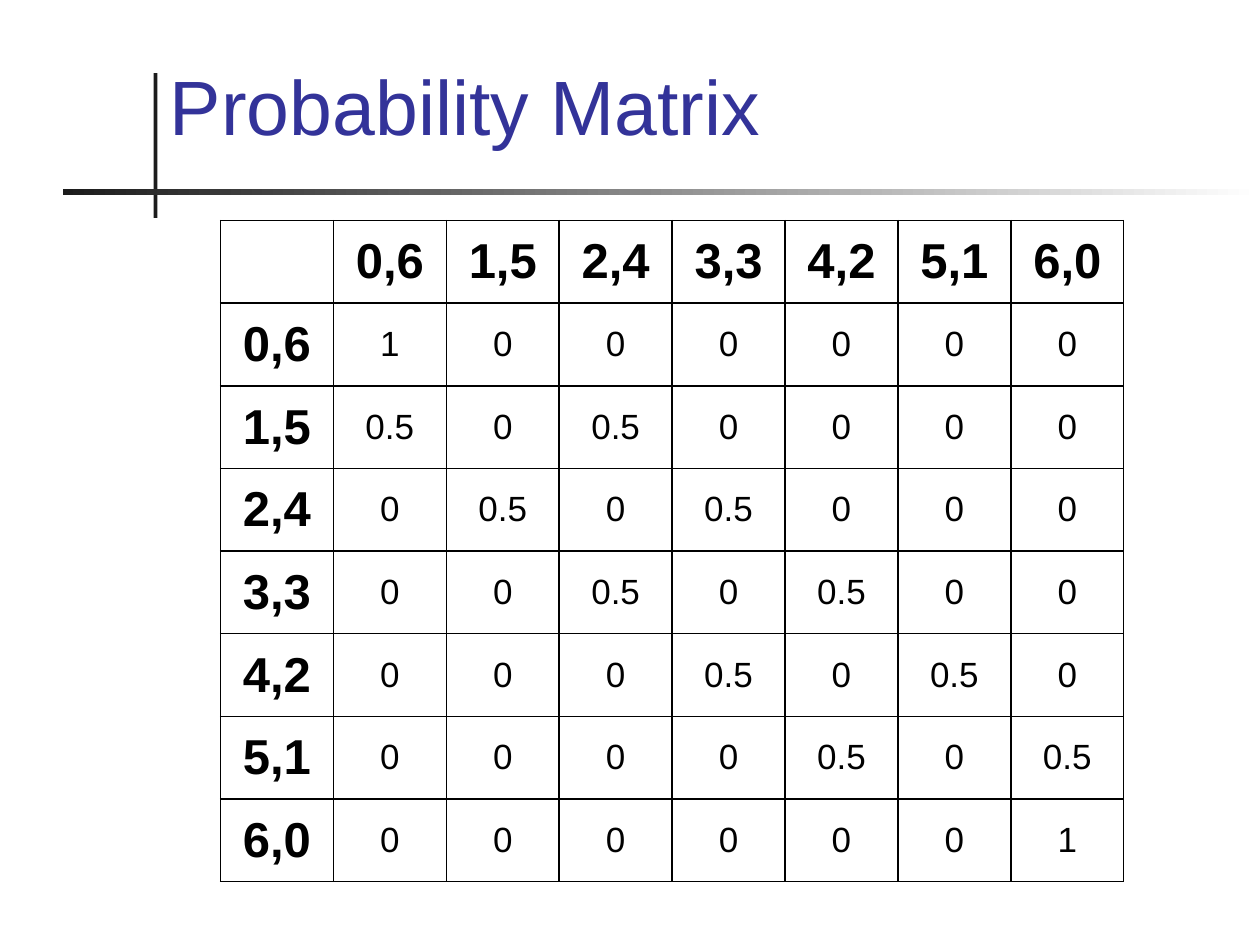
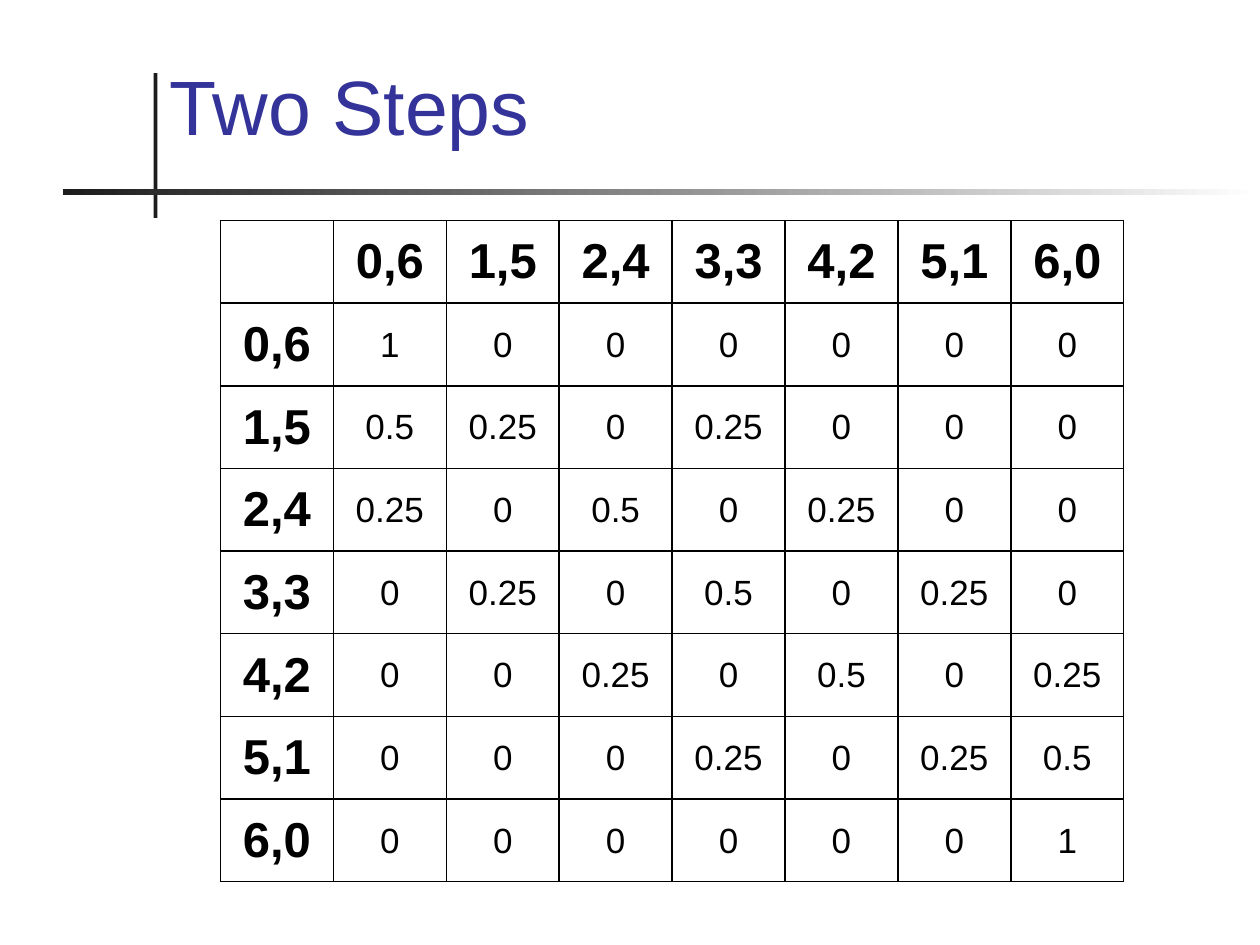
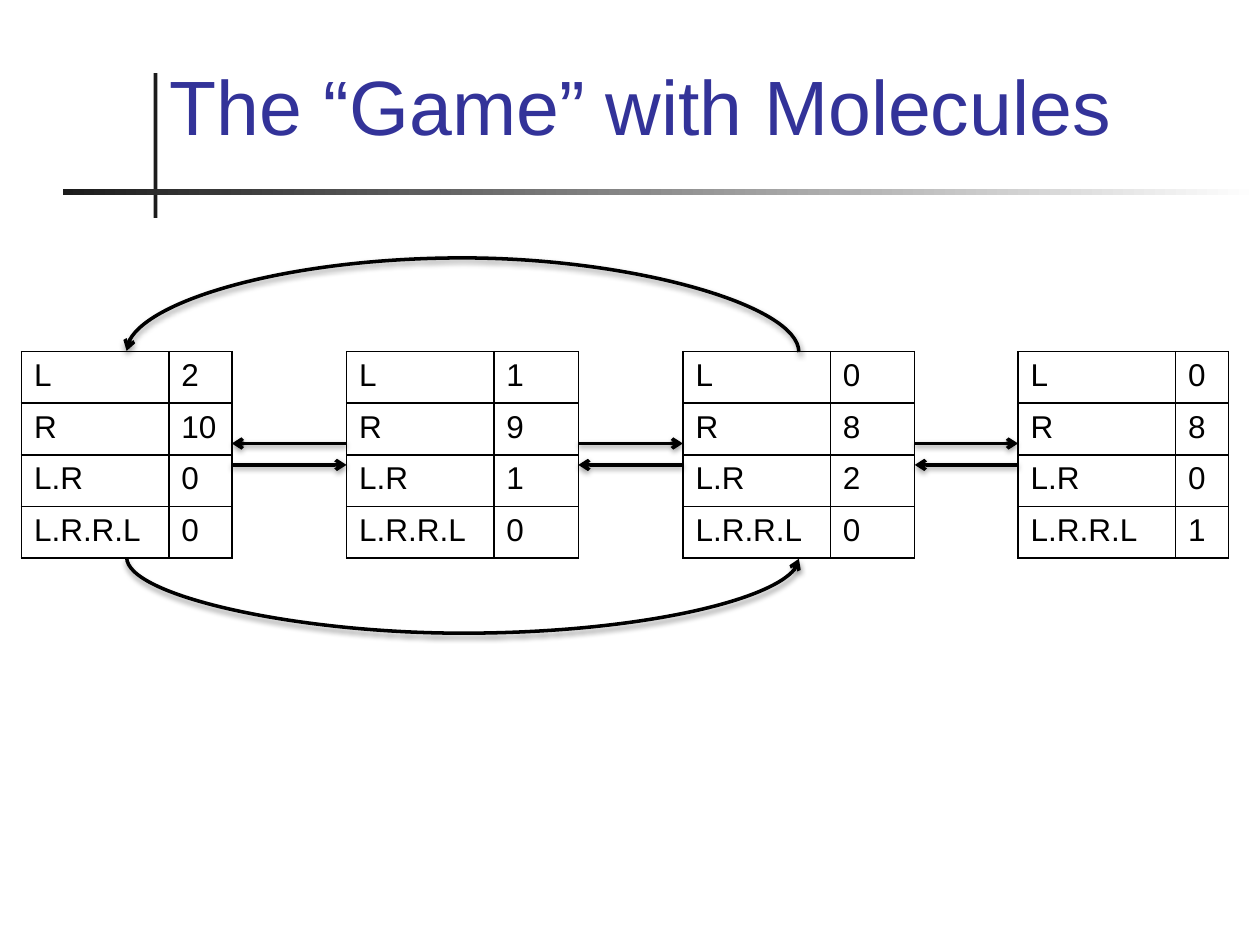
from lxml.etree import SubElement
from pptx import Presentation
from pptx.dml.color import RGBColor
from pptx.enum.shapes import MSO_CONNECTOR, MSO_SHAPE
from pptx.enum.text import MSO_ANCHOR, PP_ALIGN
from pptx.oxml.ns import qn
from pptx.util import Inches, Pt

# Content
STATES = ["0,6", "1,5", "2,4", "3,3", "4,2", "5,1", "6,0"]
ONE_STEP = [
    "1 0 0 0 0 0 0",
    "0.5 0 0.5 0 0 0 0",
    "0 0.5 0 0.5 0 0 0",
    "0 0 0.5 0 0.5 0 0",
    "0 0 0 0.5 0 0.5 0",
    "0 0 0 0 0.5 0 0.5",
    "0 0 0 0 0 0 1",
]
TWO_STEPS = [
    "1 0 0 0 0 0 0",
    "0.5 0.25 0 0.25 0 0 0",
    "0.25 0 0.5 0 0.25 0 0",
    "0 0.25 0 0.5 0 0.25 0",
    "0 0 0.25 0 0.5 0 0.25",
    "0 0 0 0.25 0 0.25 0.5",
    "0 0 0 0 0 0 1",
]
MATRICES = [  # title, rows, cell margins (left, top, right, bottom)
    ("Probability Matrix", ONE_STEP, (0.1, 0.05, 0.1, 0.05)),
    ("Two Steps", TWO_STEPS, (0.01, 0.01, 0.01, 0)),
]
GAME_TITLE = "The “Game” with Molecules"
SPECIES = ["L", "R", "L.R", "L.R.R.L"]
MIXTURES = [  # left, column widths, molecule counts
    (0.17, (1.17, 0.5), "2 10 0 0"),
    (2.75, (1.17, 0.67), "1 9 1 0"),
    (5.42, (1.17, 0.67), "0 8 2 0"),
    (8.08, (1.25, 0.42), "0 8 0 1"),
]
UPPER_ARROW_ENDS = ["headEnd", "tailEnd", "tailEnd"]

# Shared look
FONT = "Arial"
BLACK, WHITE, DARK, TITLE_BLUE = "000000", "FFFFFF", "1C1C1C", "333399"
TITLE_FORMAT = {"size": Pt(44), "bold": False}
HEADER_FORMAT = {"size": Pt(28), "bold": True}
VALUE_FORMAT = {"size": Pt(20), "bold": False}
MIXTURE_FORMAT = {"size": Pt(18), "bold": False}
MIXTURE_TOP, MIXTURE_ROW = 2.79, 0.41
UPPER_Y, LOWER_Y = 3.52, 3.69


def rgb(color):
    return RGBColor.from_string(color)


def write(frame, text, look, color=BLACK, align=PP_ALIGN.LEFT):
    para = frame.paragraphs[0]
    para.alignment = align
    span = para.add_run()
    span.text = text
    for name, value in {"name": FONT, **look}.items():
        setattr(span.font, name, value)
    span.font.color.rgb = rgb(color)


def add_bar(page, left, top, width, height):
    bar = page.shapes.add_shape(MSO_SHAPE.RECTANGLE, *map(Inches, (left, top, width, height)))
    bar.shadow.inherit = False
    bar.line.fill.background()
    return bar.fill


def add_page(deck, title):
    page = deck.slides.add_slide(deck.slide_layouts[6])
    # Crossed bars
    fill = add_bar(page, 1.22, 0.58, 0.03, 1.15)
    fill.solid()
    fill.fore_color.rgb = rgb(DARK)
    fill = add_bar(page, 0.5, 1.5, 9.5, 0.05)
    fill.gradient()
    fill.gradient_angle = 0
    for stop, color in zip(fill.gradient_stops, (DARK, WHITE)):
        stop.color.rgb = rgb(color)
    # Title
    box = page.shapes.add_textbox(*map(Inches, (1.25, 0, 8.52, 1.25)))
    box.text_frame.word_wrap = True
    box.text_frame.vertical_anchor = MSO_ANCHOR.BOTTOM
    write(box.text_frame, title, TITLE_FORMAT, TITLE_BLUE)
    return page


def outline(cell):
    properties = cell._tc.get_or_add_tcPr()
    for side in ("lnL", "lnR", "lnT", "lnB"):
        line = SubElement(properties, qn(f"a:{side}"), w=str(Pt(1)))
        SubElement(SubElement(line, qn("a:solidFill")), qn("a:srgbClr"), val=BLACK)
    cell.fill.background()


def add_grid(page, left, top, widths, heights):
    frame = page.shapes.add_table(len(heights), len(widths), Inches(left), Inches(top),
                                  Inches(sum(widths)), Inches(sum(heights)))
    grid = frame.table
    grid.first_row = grid.horz_banding = False
    for column, width in zip(grid.columns, widths):
        column.width = Inches(width)
    for row, height in zip(grid.rows, heights):
        row.height = Inches(height)
    for cell in grid.iter_cells():
        outline(cell)
    return grid


def add_matrix(page, rows, margins):
    count = len(STATES) + 1
    grid = add_grid(page, 1.75, 1.75, [7.17 / count] * count, [5.25 / count] * count)
    texts = [["", *STATES]] + [[state, *row.split()] for state, row in zip(STATES, rows)]
    for r, row in enumerate(texts):
        for c, text in enumerate(row):
            cell = grid.cell(r, c)
            cell.vertical_anchor = MSO_ANCHOR.MIDDLE
            is_value = r > 0 and c > 0
            if is_value:
                for side, margin in zip(("left", "top", "right", "bottom"), margins):
                    setattr(cell, f"margin_{side}", Inches(margin))
            if text:
                write(cell.text_frame, text, VALUE_FORMAT if is_value else HEADER_FORMAT,
                      align=PP_ALIGN.CENTER)


def add_mixture(page, left, widths, counts):
    grid = add_grid(page, left, MIXTURE_TOP, widths, [MIXTURE_ROW] * len(SPECIES))
    for r, pair in enumerate(zip(SPECIES, counts.split())):
        for c, text in enumerate(pair):
            write(grid.cell(r, c).text_frame, text, MIXTURE_FORMAT)


def add_arrow(page, kind, start, end, tip="tailEnd"):
    arrow = page.shapes.add_connector(kind, *map(Inches, (*start, *end)))
    arrow.line.color.rgb = rgb(BLACK)
    arrow.line.width = Pt(2)
    properties = arrow._element.spPr
    SubElement(properties.find(qn("a:ln")), qn(f"a:{tip}"), type="arrow")
    # Soft shadow below the line
    effects = SubElement(properties, qn("a:effectLst"))
    shadow = SubElement(effects, qn("a:outerShdw"), blurRad="40000", dist="20000",
                        dir="5400000", rotWithShape="0")
    color = SubElement(shadow, qn("a:srgbClr"), val=BLACK)
    SubElement(color, qn("a:alpha"), val="38000")
    return properties


def add_arc(page, left, right, y, bulge, flip):
    """Curved arrow: a thin upright connector turned on its side."""
    thin, middle, half = 0.01, (left + right) / 2, (right - left) / 2
    properties = add_arrow(page, MSO_CONNECTOR.CURVE, (middle - thin / 2, y - half),
                           (middle + thin / 2, y + half))
    frame = properties.find(qn("a:xfrm"))
    frame.set("rot", str(270 * 60000))
    frame.set(flip, "1")
    guides = properties.find(qn("a:prstGeom")).find(qn("a:avLst"))
    SubElement(guides, qn("a:gd"), name="adj1", fmla=f"val {round(bulge / thin * 100000)}")


def add_game(page):
    for mixture in MIXTURES:
        add_mixture(page, *mixture)
    # Straight arrow pairs between neighbours
    opposite = {"headEnd": "tailEnd", "tailEnd": "headEnd"}
    for (left, widths, _), (end, _, _), tip in zip(MIXTURES, MIXTURES[1:], UPPER_ARROW_ENDS):
        start = left + sum(widths)
        for y, arrow_tip in ((UPPER_Y, tip), (LOWER_Y, opposite[tip])):
            add_arrow(page, MSO_CONNECTOR.STRAIGHT, (start, y), (end, y), arrow_tip)
    # Arcs between the first and third mixtures
    first, third = (left + sum(widths) / 2 for left, widths, _ in MIXTURES[::2])
    bottom = MIXTURE_TOP + MIXTURE_ROW * len(SPECIES)
    add_arc(page, first, third, bottom, 0.61, "flipH")
    add_arc(page, first, third, MIXTURE_TOP, 0.76, "flipV")


def main():
    deck = Presentation()
    deck.slide_width, deck.slide_height = Inches(10), Inches(7.5)
    for title, rows, margins in MATRICES:
        add_matrix(add_page(deck, title), rows, margins)
    add_game(add_page(deck, GAME_TITLE))
    deck.save("out.pptx")


if __name__ == "__main__":
    main()
